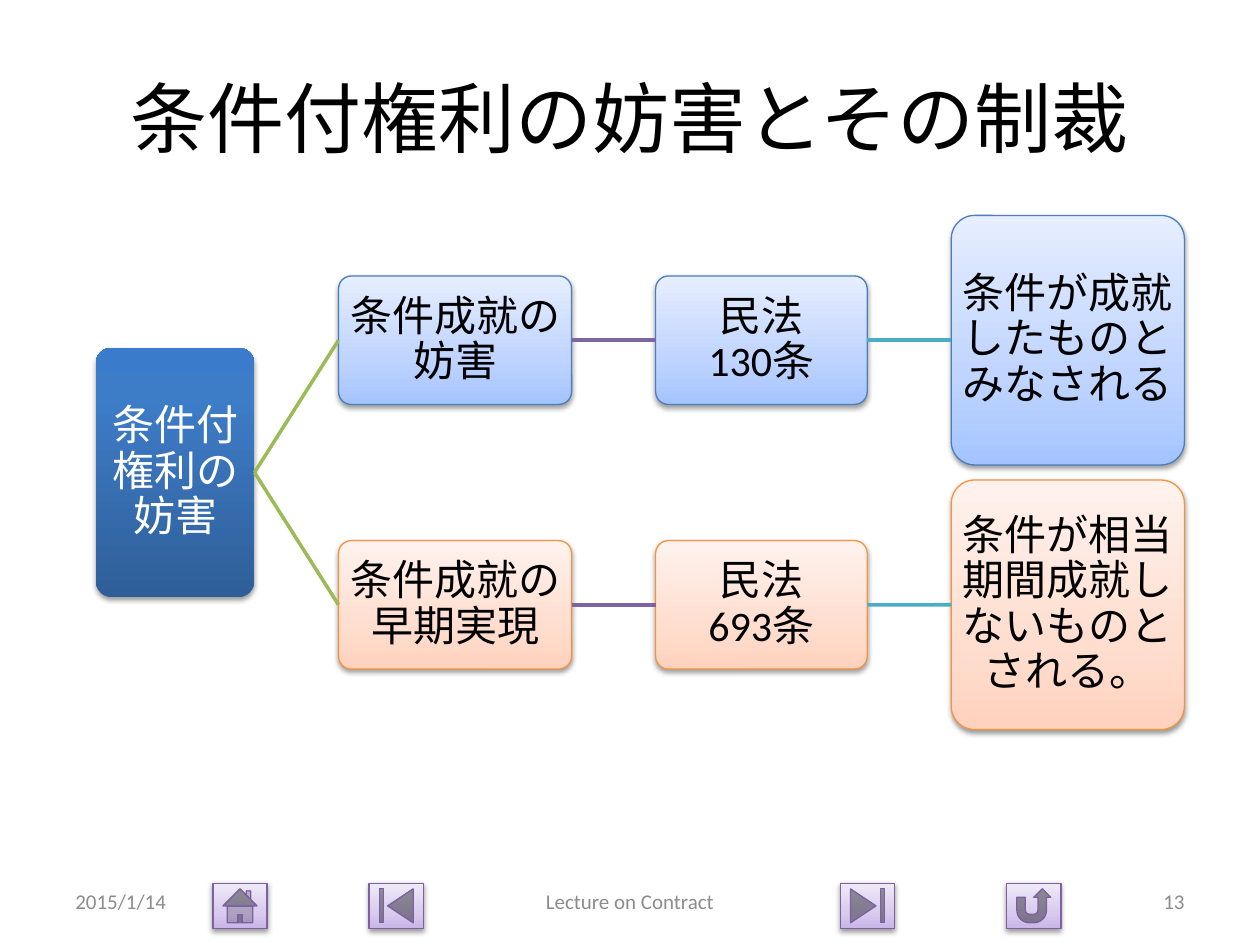
from dataclasses import dataclass

from lxml.etree import SubElement
from pptx import Presentation
from pptx.dml.color import RGBColor
from pptx.enum.shapes import MSO_CONNECTOR, MSO_SHAPE
from pptx.enum.text import MSO_ANCHOR, PP_ALIGN
from pptx.oxml.ns import qn
from pptx.util import Inches, Pt


@dataclass(frozen=True)
class Look:
    stops: tuple  # (position in percent, colour), from bottom to top
    outline: str = ""
    text: str = "000000"


@dataclass(frozen=True)
class Theme:
    font: str = "Calibri"
    title_size: int = 44
    box_size: int = 24
    footer_size: int = 12
    black: str = "000000"
    footer: str = "8C8C8C"
    links: tuple = ("9BBB59", "8064A2", "4BACC6")
    link_width: float = 2
    outline_width: float = 0.75
    root: Look = Look(((0, "2F5F99"), (80, "3D7CC7"), (100, "3A7CCB")), text="FFFFFF")
    blue: Look = Look(((0, "A4C4FF"), (35, "BFD4FF"), (100, "E6EEFF")), "4B7EBC")
    orange: Look = Look(((0, "FFD2BD"), (35, "FFDED0"), (100, "FFF2ED")), "F69240")
    button: Look = Look(((0, "C9B5E8"), (35, "D8CBEE"), (100, "F0EAF9")), "7D60A0")


THEME = Theme()


def write(paragraph, text, size, color, align):
    """Add the lines of text as runs, parted by line breaks."""
    paragraph.alignment = align
    for index, line in enumerate(text.split("\n")):
        if index:
            paragraph.add_line_break()
        run = paragraph.add_run()
        run.text = line
        run.font.name = THEME.font
        run.font.size = Pt(size)
        run.font.color.rgb = RGBColor.from_string(color)


def apply_look(shape, look):
    """Vertical gradient, outline and a soft shadow below."""
    shape.fill.gradient()
    shape.fill.gradient_angle = 90
    properties = shape._element.spPr
    stop_list = properties.find(qn("a:gradFill")).find(qn("a:gsLst"))
    stop_list.clear()
    for position, color in look.stops:
        stop = SubElement(stop_list, qn("a:gs"), pos=str(position * 1000))
        SubElement(stop, qn("a:srgbClr"), val=color)

    if look.outline:
        shape.line.color.rgb = RGBColor.from_string(look.outline)
        shape.line.width = Pt(THEME.outline_width)
    else:
        shape.line.fill.background()

    effects = SubElement(properties, qn("a:effectLst"))
    shadow = SubElement(effects, qn("a:outerShdw"), blurRad=str(Pt(3.1)),
                        dist=str(Pt(1.6)), dir="5400000", rotWithShape="0")
    shade = SubElement(shadow, qn("a:srgbClr"), val=THEME.black)
    SubElement(shade, qn("a:alpha"), val="38000")


def add_box(slide, left, middle, width, height, text, look):
    box = slide.shapes.add_shape(
        MSO_SHAPE.ROUNDED_RECTANGLE, Inches(left), Inches(middle - height / 2),
        Inches(width), Inches(height))
    box.adjustments[0] = 0.1
    apply_look(box, look)
    frame = box.text_frame
    frame.word_wrap = True
    frame.vertical_anchor = MSO_ANCHOR.MIDDLE
    frame.margin_left = frame.margin_right = Inches(0.02)
    frame.margin_top = frame.margin_bottom = Inches(0.02)
    paragraph = frame.paragraphs[0]
    paragraph.line_spacing = 0.9
    write(paragraph, text, THEME.box_size, look.text, PP_ALIGN.CENTER)
    return box


def add_link(slide, parent, child, color):
    """Line from the right side of parent to the left side of child."""
    link = slide.shapes.add_connector(MSO_CONNECTOR.STRAIGHT, 0, 0, 0, 0)
    link.begin_connect(parent, 3)
    link.end_connect(child, 1)
    link.line.color.rgb = RGBColor.from_string(color)
    link.line.width = Pt(THEME.link_width)
    SubElement(link._element.spPr, qn("a:effectLst"))


def add_title(slide, left, top, width, height):
    title = slide.shapes.title
    title.left, title.top = Inches(left), Inches(top)
    title.width, title.height = Inches(width), Inches(height)
    title.text_frame.vertical_anchor = MSO_ANCHOR.MIDDLE
    write(title.text_frame.paragraphs[0], "条件付権利の妨害とその制裁",
          THEME.title_size, THEME.black, PP_ALIGN.CENTER)


def add_tree(slide, left, top, width, height):
    """Root on the left, with one row of three boxes for each case."""
    tall, low = 1.98, 1.02
    root_width = 1.26
    columns = ((1.85, low), (1.68, low), (1.85, tall))
    column_widths = sum(column_width for column_width, _ in columns)
    gap = (width - root_width - column_widths) / len(columns)
    cases = (
        (THEME.blue, top + tall / 2,
         ("条件成就の\n妨害", "民法\n130条", "条件が成就したものとみなされる")),
        (THEME.orange, top + height - tall / 2,
         ("条件成就の\n早期実現", "民法\n693条", "条件が相当期間成就しないものとされる。")),
    )
    root = add_box(slide, left, top + height / 2, root_width, tall,
                   "条件付\n権利の\n妨害", THEME.root)
    for look, middle, texts in cases:
        parent = root
        box_left = left + root_width + gap
        for (box_width, box_height), text, color in zip(columns, texts, THEME.links):
            box = add_box(slide, box_left, middle, box_width, box_height, text, look)
            add_link(slide, parent, box, color)
            parent = box
            box_left += box_width + gap


def add_buttons(slide, left, top):
    """Navigation buttons, offset from the left edge of the row."""
    buttons = (
        (MSO_SHAPE.ACTION_BUTTON_HOME, 0),
        (MSO_SHAPE.ACTION_BUTTON_BEGINNING, 1.24),
        (MSO_SHAPE.ACTION_BUTTON_END, 4.98),
        (MSO_SHAPE.ACTION_BUTTON_RETURN, 6.3),
    )
    for kind, offset in buttons:
        button = slide.shapes.add_shape(
            kind, Inches(left + offset), Inches(top), Inches(0.43), Inches(0.36))
        apply_look(button, THEME.button)


def add_footer(slide, left, top, width, height):
    """Date at the left, lecture name in the middle, page number at the right."""
    side, centre = 2.33, 3.17
    parts = (
        (left, side, "2015/1/14", PP_ALIGN.LEFT),
        (left + (width - centre) / 2, centre, "Lecture on Contract", PP_ALIGN.CENTER),
        (left + width - side, side, "13", PP_ALIGN.RIGHT),
    )
    for part_left, part_width, text, align in parts:
        label = slide.shapes.add_textbox(
            Inches(part_left), Inches(top), Inches(part_width), Inches(height))
        label.text_frame.word_wrap = True
        label.text_frame.vertical_anchor = MSO_ANCHOR.MIDDLE
        write(label.text_frame.paragraphs[0], text,
              THEME.footer_size, THEME.footer, align)


def main():
    deck = Presentation()
    deck.slide_width, deck.slide_height = Inches(10), Inches(7.5)
    slide = deck.slides.add_slide(deck.slide_layouts[5])
    add_buttons(slide, 1.69, 7.01)
    add_title(slide, 0.5, 0.3, 9, 1.25)
    add_footer(slide, 0.5, 6.95, 9, 0.4)
    add_tree(slide, 0.76, 1.71, 8.64, 4.08)
    deck.save("out.pptx")


if __name__ == "__main__":
    main()
